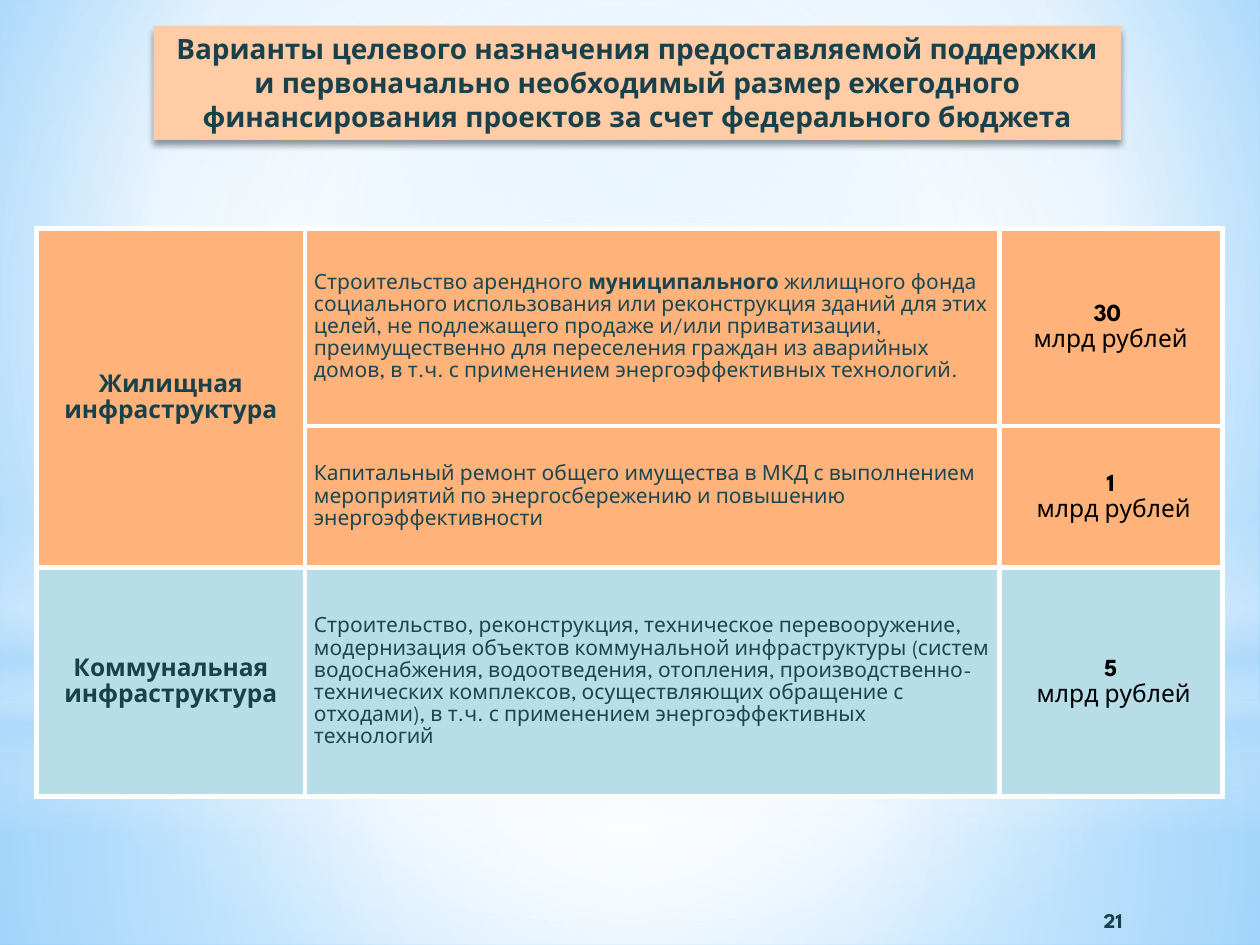
from lxml.etree import SubElement
from pptx import Presentation
from pptx.dml.color import RGBColor
from pptx.enum.shapes import MSO_SHAPE
from pptx.enum.text import MSO_ANCHOR, PP_ALIGN
from pptx.oxml.ns import qn
from pptx.util import Cm, Pt

FONT = "League Spartan"
DARK, BODY, BLACK, WHITE = "18414C", "1A4652", "000000", "FFFFFF"
PEACH, ORANGE, BLUE, SKY = "FFCCA6", "FFB37A", "B6DDE8", "B4DCFA"
CENTRE = (50, 50, 50, 50)

TITLE = ("Варианты целевого назначения предоставляемой поддержки и первоначально "
         "необходимый размер ежегодного финансирования проектов за счет федерального бюджета")
# Each row: fill, heading, description as (text, bold) spans, amount lines
ROWS = [
    (ORANGE, "Жилищная инфраструктура",
     [("Строительство арендного ", False), ("муниципального", True),
      (" жилищного фонда социального использования или реконструкция зданий для этих "
       "целей, не подлежащего продаже и/или приватизации, преимущественно для "
       "переселения граждан из аварийных домов, в т.ч. с применением "
       "энергоэффективных технологий.", False)],
     ("30 ", "млрд рублей")),
    (ORANGE, None,
     [("Капитальный ремонт общего имущества в МКД с выполнением мероприятий по "
       "энергосбережению и повышению энергоэффективности", False)],
     ("1", " млрд рублей")),
    (BLUE, "Коммунальная инфраструктура",
     [("Строительство, реконструкция, техническое перевооружение, модернизация объектов "
       "коммунальной инфраструктуры (систем водоснабжения, водоотведения, отопления, "
       "производственно-технических комплексов, осуществляющих обращение с отходами), "
       "в т.ч. с применением энергоэффективных технологий", False)],
     ("5", " млрд рублей")),
]


def color(value):
    return RGBColor.from_string(value)


def add_color(parent, value, opacity=100):
    node = SubElement(parent, qn("a:srgbClr"), val=value)
    if opacity < 100:
        SubElement(node, qn("a:alpha"), val=str(opacity * 1000))


def set_gradient(fill, owner, stops, focus=None):
    """Stops are (position, colour, opacity); without a focus the gradient runs downwards."""
    fill.solid()
    solid = owner.find(qn("a:solidFill"))
    gradient = SubElement(owner, qn("a:gradFill"), rotWithShape="1")
    owner.replace(solid, gradient)
    stop_list = SubElement(gradient, qn("a:gsLst"))
    for position, value, opacity in stops:
        add_color(SubElement(stop_list, qn("a:gs"), pos=str(position * 1000)), value, opacity)
    if focus is None:
        SubElement(gradient, qn("a:lin"), ang="5400000", scaled="0")
    else:
        circle = SubElement(gradient, qn("a:path"), path="circle")
        SubElement(circle, qn("a:fillToRect"),
                   {side: str(inset * 1000) for side, inset in zip("ltrb", focus)})


def add_plain_shape(page, kind, box):
    shape = page.shapes.add_shape(kind, *map(Cm, box))
    shape.shadow.inherit = False
    shape.line.fill.background()
    return shape


def add_backdrop(page, width, height):
    background_fill = page.background.fill
    background_fill.solid()
    set_gradient(background_fill, page.element.find(".//" + qn("p:bgPr")),
                 [(0, "9ED5FF", 100), (60, WHITE, 100), (100, "5BB9FF", 100)],
                 (20, 10, 20, 60))
    horizon = 14.17
    layers = [
        (MSO_SHAPE.RECTANGLE, horizon, height - horizon,
         [(0, WHITE, 91), (37, WHITE, 76), (100, SKY, 79)], CENTRE),
        (MSO_SHAPE.RECTANGLE, 0, horizon,
         [(0, WHITE, 89), (48, WHITE, 62), (100, SKY, 79)], CENTRE),
        (MSO_SHAPE.RECTANGLE, 10.46, 6.35,
         [(0, WHITE, 0), (29, WHITE, 30), (45, SKY, 40), (55, WHITE, 26),
          (65, SKY, 60), (100, WHITE, 0)], None),
        (MSO_SHAPE.OVAL, 4.45, horizon, [(0, WHITE, 100), (56, WHITE, 0)], CENTRE),
    ]
    for kind, top, depth, stops, focus in layers:
        shape = add_plain_shape(page, kind, (0, top, width, depth))
        set_gradient(shape.fill, shape.element.spPr, stops, focus)


def write(para, spans, size, value, align=PP_ALIGN.CENTER, spacing=None):
    para.alignment = align
    para.line_spacing = spacing
    para.font.name = FONT
    para.font.size = Pt(size)
    para.font.color.rgb = color(value)
    for text, bold in spans:
        span = para.add_run()
        span.text = text
        span.font.bold = bold


def add_label(page, box, text, size, anchor):
    frame = page.shapes.add_textbox(*map(Cm, box)).text_frame
    frame.word_wrap = True
    frame.vertical_anchor = anchor
    write(frame.paragraphs[0], [(text, True)], size, DARK)


def add_title(page, box):
    panel = add_plain_shape(page, MSO_SHAPE.RECTANGLE, box)
    panel.fill.solid()
    panel.fill.fore_color.rgb = color(PEACH)
    shadow = SubElement(panel.element.spPr.find(qn("a:effectLst")), qn("a:outerShdw"),
                        blurRad=str(Pt(4)), dist=str(Pt(3)), dir="5400000", rotWithShape="0")
    add_color(shadow, BLACK, 40)
    add_label(page, box, TITLE, 16, MSO_ANCHOR.TOP)


def style_cell(cell, fill):
    cell.vertical_anchor = MSO_ANCHOR.MIDDLE
    cell.margin_left = cell.margin_right = Cm(0.18)
    cell.margin_top = cell.margin_bottom = 0
    properties = cell._tc.get_or_add_tcPr()
    for side in ("lnL", "lnR", "lnT", "lnB"):
        line = SubElement(properties, qn("a:" + side), w=str(Pt(3)))
        add_color(SubElement(line, qn("a:solidFill")), WHITE)
    cell.fill.solid()
    cell.fill.fore_color.rgb = color(fill)


def add_funding_table(page, box):
    column_shares, row_shares = (2.13, 5.51, 1.77), (1.57, 1.12, 1.82)
    table = page.shapes.add_table(len(ROWS), 3, *map(Cm, box)).table
    table.first_row = table.horz_banding = False
    for column, share in zip(table.columns, column_shares):
        column.width = Cm(box[2] * share / sum(column_shares))
    for row, share in zip(table.rows, row_shares):
        row.height = Cm(box[3] * share / sum(row_shares))

    for row, (fill, heading, description, amount) in zip(table.rows, ROWS):
        for cell in row.cells:
            style_cell(cell, fill)
        heading_cell, description_cell, amount_cell = row.cells
        if heading:
            write(heading_cell.text_frame.paragraphs[0], [(heading, True)], 14, DARK,
                  spacing=1.15)
        write(description_cell.text_frame.paragraphs[0], description, 12, BODY,
              PP_ALIGN.LEFT, 1.15)
        number, unit = amount
        frame = amount_cell.text_frame
        write(frame.paragraphs[0], [(number, True)], 14, BLACK, spacing=1.15)
        write(frame.add_paragraph(), [(unit, False)], 14, BLACK, spacing=1.15)
    table.cell(0, 0).merge(table.cell(1, 0))


def main():
    width, height = 25.4, 19.05
    deck = Presentation()
    deck.slide_width, deck.slide_height = Cm(width), Cm(height)
    page = deck.slides.add_slide(deck.slide_layouts[6])
    add_backdrop(page, width, height)
    add_title(page, (3.1, 0.52, 19.5, 2.3))
    add_funding_table(page, (0.74, 4.6, 23.9, 11.46))
    add_label(page, (19.48, 18.03, 5.92, 1.02), "21", 12, MSO_ANCHOR.MIDDLE)
    deck.save("out.pptx")


if __name__ == "__main__":
    main()
